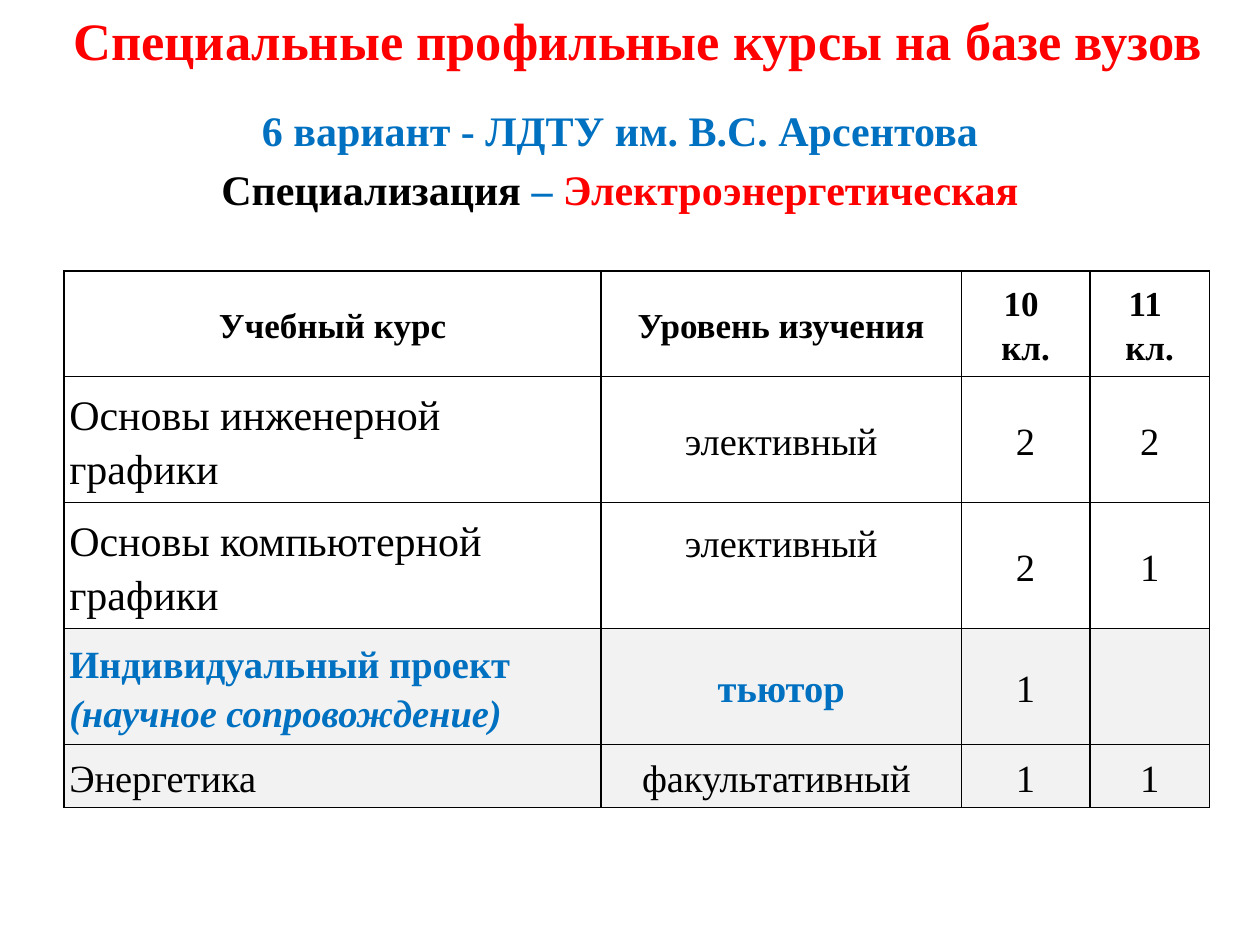
from lxml import etree
from pptx import Presentation
from pptx.dml.color import RGBColor
from pptx.enum.text import MSO_ANCHOR, MSO_AUTO_SIZE, PP_ALIGN
from pptx.oxml.ns import qn
from pptx.util import Inches, Pt

LEFT, CENTER = PP_ALIGN.LEFT, PP_ALIGN.CENTER
TOP, MIDDLE = MSO_ANCHOR.TOP, MSO_ANCHOR.MIDDLE
NO_AUTOFIT = MSO_AUTO_SIZE.NONE

FONT = "Times New Roman"
BLACK, RED, BLUE = "000000", "FF0000", "0070C0"
WHITE, GREY = "FFFFFF", "F2F2F2"

# Table grid, in inches
COLUMNS = [4.26, 2.86, 1.02, 0.95]
ROWS = [0.84, 1.0, 1.0, 0.92, 0.5]
CELL_INSET = 0.04

HEADER = dict(size=20, bold=True)
COURSE = dict(size=24)
NORMAL = dict(size=22)
PROJECT = dict(size=22, bold=True, color=BLUE)
PROJECT_NOTE = dict(PROJECT, italic=True)

# Each row: fill, then cells; each cell lists its lines as (text, style)
COURSES = [
    (WHITE, [[("Учебный курс", HEADER)], [("Уровень изучения", HEADER)],
             [("10 ", HEADER), ("кл.", HEADER)],
             [("11 ", HEADER), ("кл.", HEADER)]]),
    (WHITE, [[("Основы инженерной графики", COURSE)],
             [("элективный", NORMAL)], [("2", NORMAL)], [("2", NORMAL)]]),
    (WHITE, [[("Основы компьютерной графики", COURSE)],
             [("элективный", NORMAL)], [("2", NORMAL)], [("1", NORMAL)]]),
    (GREY, [[("Индивидуальный проект", PROJECT),
             ("(научное сопровождение)", PROJECT_NOTE)],
            [("тьютор", PROJECT)], [("1", NORMAL)], []]),
    (GREY, [[("Энергетика", NORMAL)], [("факультативный ", NORMAL)],
            [("1", NORMAL)], [("1", NORMAL)]]),
]


def rgb(value):
    return RGBColor.from_string(value)


def add_span(para, text, size, color=BLACK, bold=False, italic=False):
    span = para.add_run()
    span.text = text
    font = span.font
    font.name, font.size = FONT, Pt(size)
    font.bold, font.italic = bold, italic
    font.color.rgb = rgb(color)


def next_para(frame, index):
    return frame.paragraphs[0] if index == 0 else frame.add_paragraph()


def place(shape, box, anchor):
    shape.left, shape.top, shape.width, shape.height = map(Inches, box)
    frame = shape.text_frame
    frame.word_wrap = True
    frame.auto_size = NO_AUTOFIT
    frame.vertical_anchor = anchor
    return frame


def fill_title(page, box):
    para = place(page.shapes.title, box, MIDDLE).paragraphs[0]
    para.alignment = CENTER
    add_span(para, "Специальные профильные курсы на базе вузов", 30, RED, True)


def fill_subtitle(page, box):
    frame = place(page.placeholders[1], box, TOP)
    lines = [
        [("6 вариант - ЛДТУ им. В.С. Арсентова", BLUE)],
        [("Специализация", BLACK), (" – ", BLUE), ("Электроэнергетическая", RED)],
    ]
    for index, line in enumerate(lines):
        para = next_para(frame, index)
        para.alignment = CENTER
        # Plain centred line: no bullet, no hanging indent
        props = para._p.get_or_add_pPr()
        props.set("marL", "0")
        props.set("indent", "0")
        etree.SubElement(props, qn("a:buNone"))
        for text, color in line:
            add_span(para, text, 24, color, True)


def add_borders(cell):
    props = cell._tc.get_or_add_tcPr()
    for index, side in enumerate(("a:lnL", "a:lnR", "a:lnT", "a:lnB")):
        line = etree.Element(qn(side), w=str(Pt(1)))
        fill = etree.SubElement(line, qn("a:solidFill"))
        etree.SubElement(fill, qn("a:srgbClr"), val=BLACK)
        props.insert(index, line)


def fill_cell(cell, lines, fill, align):
    cell.fill.solid()
    cell.fill.fore_color.rgb = rgb(fill)
    cell.vertical_anchor = MIDDLE
    cell.margin_left = cell.margin_right = Inches(CELL_INSET)
    cell.margin_top = cell.margin_bottom = Inches(CELL_INSET)
    for index, (text, style) in enumerate(lines):
        para = next_para(cell.text_frame, index)
        para.alignment = align
        para.line_spacing = 1.15
        add_span(para, text, **style)
    add_borders(cell)


def add_course_table(page, left, top):
    frame = page.shapes.add_table(
        len(ROWS), len(COLUMNS), Inches(left), Inches(top),
        Inches(sum(COLUMNS)), Inches(sum(ROWS)))
    table = frame.table
    table.first_row = table.horz_banding = False
    for column, width in zip(table.columns, COLUMNS):
        column.width = Inches(width)
    for row, height in zip(table.rows, ROWS):
        row.height = Inches(height)
    for r, (fill, cells) in enumerate(COURSES):
        for c, lines in enumerate(cells):
            align = LEFT if r > 0 and c == 0 else CENTER
            fill_cell(table.cell(r, c), lines, fill, align)
    # The level of the second course sits one half-line above the middle
    table.cell(2, 1).margin_bottom = Inches(CELL_INSET + 0.39)


def main():
    deck = Presentation()
    deck.slide_width, deck.slide_height = Inches(10), Inches(7.5)
    page = deck.slides.add_slide(deck.slide_layouts[1])
    fill_title(page, (0.27, 0.01, 9.59, 0.61))
    add_course_table(page, 0.51, 2.15)
    fill_subtitle(page, (0.67, 0.78, 8.5, 0.94))
    deck.save("out.pptx")


if __name__ == "__main__":
    main()
